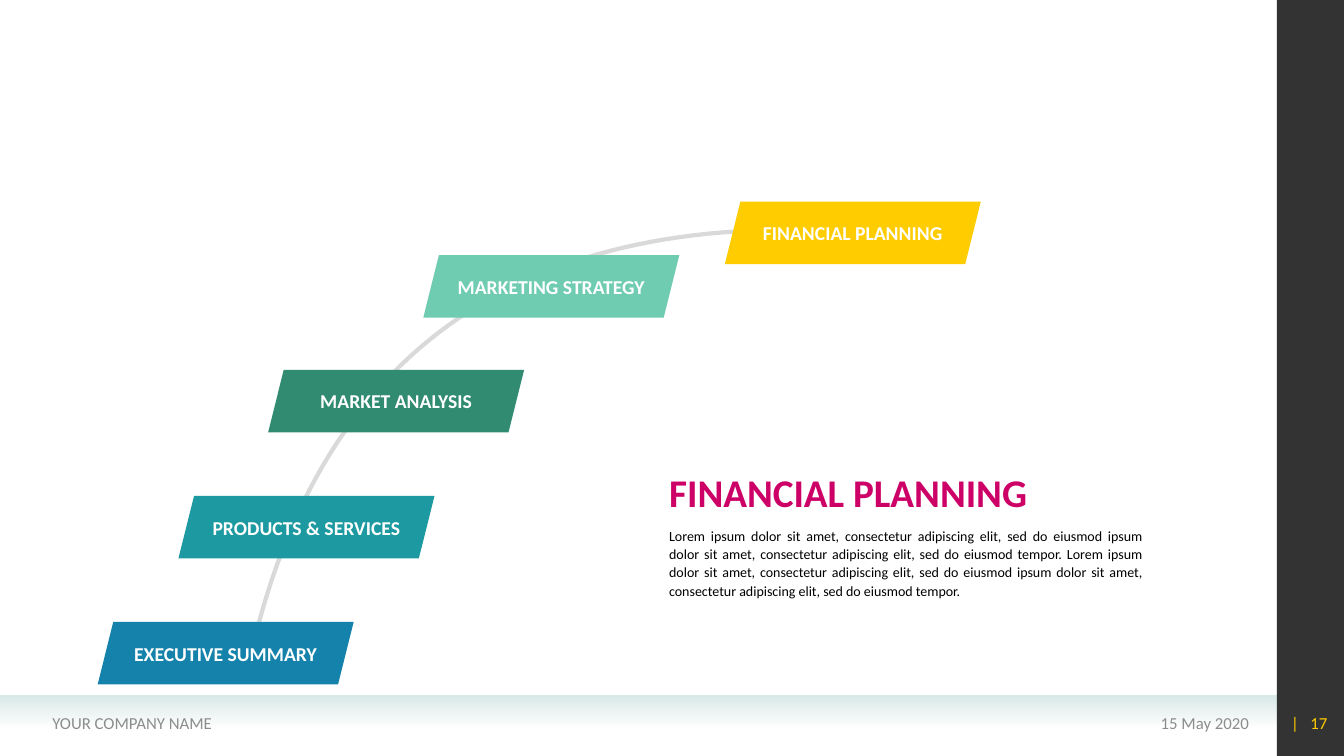
from pptx import Presentation
from pptx.dml.color import RGBColor
from pptx.enum.shapes import MSO_SHAPE
from pptx.enum.text import MSO_ANCHOR, PP_ALIGN
from pptx.oxml import parse_xml
from pptx.oxml.ns import nsdecls, qn
from pptx.util import Inches, Pt

RECTANGLE, PARALLELOGRAM = MSO_SHAPE.RECTANGLE, MSO_SHAPE.PARALLELOGRAM
MIDDLE, BOTTOM = MSO_ANCHOR.MIDDLE, MSO_ANCHOR.BOTTOM
LEFT, CENTER, RIGHT, JUSTIFY = (PP_ALIGN.LEFT, PP_ALIGN.CENTER,
                                PP_ALIGN.RIGHT, PP_ALIGN.JUSTIFY)

COLORS = {
    "mist": "D9E9E8", "black": "000000", "white": "FFFFFF", "grey": "8C8C8C",
    "curve": "D9D9D9", "yellow": "FFCC00", "pink": "CC0066", "blue": "1482AB",
    "teal": "1D9AA1", "green": "318B71", "mint": "70CCB1",
}

FOOTER_TOP, FOOTER_HEIGHT = 92.93, 5.33
STEP_SIZE = (19.05, 8.27)
STEPS = [  # label, colour, left, top
    ("EXECUTIVE SUMMARY", "blue", 7.27, 82.27),
    ("PRODUCTS & SERVICES", "teal", 13.28, 65.6),
    ("MARKET ANALYSIS", "green", 19.95, 48.93),
    ("MARKETING STRATEGY", "mint", 31.5, 33.73),
    ("FINANCIAL PLANNING", "yellow", 53.93, 26.67),
]
CURVE = [(18.23, 90.4), (22.8, 48.53), (37.43, 28.53), (62.1, 30.53)]
BODY = (
    "Lorem ipsum dolor sit amet, consectetur adipiscing elit, sed do eiusmod "
    "ipsum dolor sit amet, consectetur adipiscing elit, sed do eiusmod tempor. "
    "Lorem ipsum dolor sit amet, consectetur adipiscing elit, sed do eiusmod "
    "ipsum dolor sit amet, consectetur adipiscing elit, sed do eiusmod tempor."
)


class Page:
    """Draws on one slide; all places are percentages of its size."""

    font = "Calibri"

    def __init__(self, deck):
        self.width, self.height = deck.slide_width, deck.slide_height
        self.shapes = deck.slides.add_slide(deck.slide_layouts[6]).shapes

    def point(self, x, y):
        return round(x * self.width / 100), round(y * self.height / 100)

    def area(self, left, top, width, height):
        return *self.point(left, top), *self.point(width, height)

    def color(self, name):
        return RGBColor.from_string(COLORS[name])

    def set_alpha(self, color_element, percent):
        color_element.append(parse_xml(
            f'<a:alpha {nsdecls("a")} val="{percent * 1000}"/>'))

    def block(self, kind, area, color, alpha=100):
        shape = self.shapes.add_shape(kind, *self.area(*area))
        shape.shadow.inherit = False
        shape.line.fill.background()
        shape.fill.solid()
        shape.fill.fore_color.rgb = self.color(color)
        if alpha < 100:
            self.set_alpha(next(shape._element.spPr.iter(qn("a:srgbClr"))), alpha)
        return shape

    def fading_band(self, area, color):
        band = self.block(RECTANGLE, area, color)
        band.fill.gradient()
        band.fill.gradient_angle = 270
        for stop, position in zip(band.fill.gradient_stops, (0, 1)):
            stop.color.rgb = self.color(color)
            stop.position = position
        *_, last = band._element.spPr.iter(qn("a:srgbClr"))
        self.set_alpha(last, 0)

    def fill_frame(self, frame, text, size, color, align=LEFT, bold=False,
                   anchor=MIDDLE, wrap=True):
        frame.word_wrap = wrap
        frame.vertical_anchor = anchor
        para = frame.paragraphs[0]
        para.alignment = align
        para.font.name, para.font.size, para.font.bold = self.font, Pt(size), bold
        para.font.color.rgb = self.color(color)
        if text:
            para.add_run().text = text
        return para

    def text(self, area, text, size, color, **style):
        box = self.shapes.add_textbox(*self.area(*area))
        return self.fill_frame(box.text_frame, text, size, color, **style)

    def step(self, label, color, left, top):
        shape = self.block(PARALLELOGRAM, (left, top, *STEP_SIZE), color)
        self.fill_frame(shape.text_frame, label, 14, "white", align=CENTER,
                        bold=True, wrap=False)

    def bezier(self, controls, color, width, pieces=60):
        points = []
        for index in range(pieces + 1):
            t = index / pieces
            weights = ((1 - t) ** 3, 3 * t * (1 - t) ** 2,
                       3 * t ** 2 * (1 - t), t ** 3)
            points.append(self.point(*(
                sum(w * c[axis] for w, c in zip(weights, controls))
                for axis in (0, 1))))
        builder = self.shapes.build_freeform(*points[0])
        builder.add_line_segments(points[1:], close=False)
        curve = builder.convert_to_shape()
        curve.shadow.inherit = False
        curve.fill.background()
        curve.line.color.rgb = self.color(color)
        curve.line.width = Pt(width)

    def page_number(self, area, number):
        para = self.text(area, "", 12, "yellow", align=RIGHT)
        for part, spacing in (("|", 0), (" ", 540), (number, 0)):
            span = para.add_run()
            span.text = part
            if spacing:
                span._r.get_or_add_rPr().set("spc", str(spacing))


def main():
    deck = Presentation()
    deck.slide_width, deck.slide_height = Inches(13.33), Inches(7.5)
    page = Page(deck)

    # Footer and side bar
    page.fading_band((0, 92, 95, 4.13), "mist")
    page.block(RECTANGLE, (95, 0, 5, 100), "black", alpha=80)
    page.text((68.25, FOOTER_TOP, 25.43, FOOTER_HEIGHT), "15 May 2020",
              12, "grey", align=RIGHT)
    page.text((3.15, FOOTER_TOP, 36.75, FOOTER_HEIGHT), "YOUR COMPANY NAME",
              12, "grey")
    page.page_number((94.5, FOOTER_TOP, 5, FOOTER_HEIGHT), "17")

    # Rising curve with its steps
    page.bezier(CURVE, "curve", 3)
    for step in STEPS:
        page.step(*step)

    # Description of the last step
    page.text((49.05, 61.2, 31.05, 7.6), "FINANCIAL PLANNING", 28, "pink",
              bold=True)
    body = page.text((49.05, 69.07, 36.68, 10.8), BODY, 10, "black",
                     align=JUSTIFY, anchor=BOTTOM)
    body.line_spacing = Pt(12.9)

    deck.save("out.pptx")


if __name__ == "__main__":
    main()
